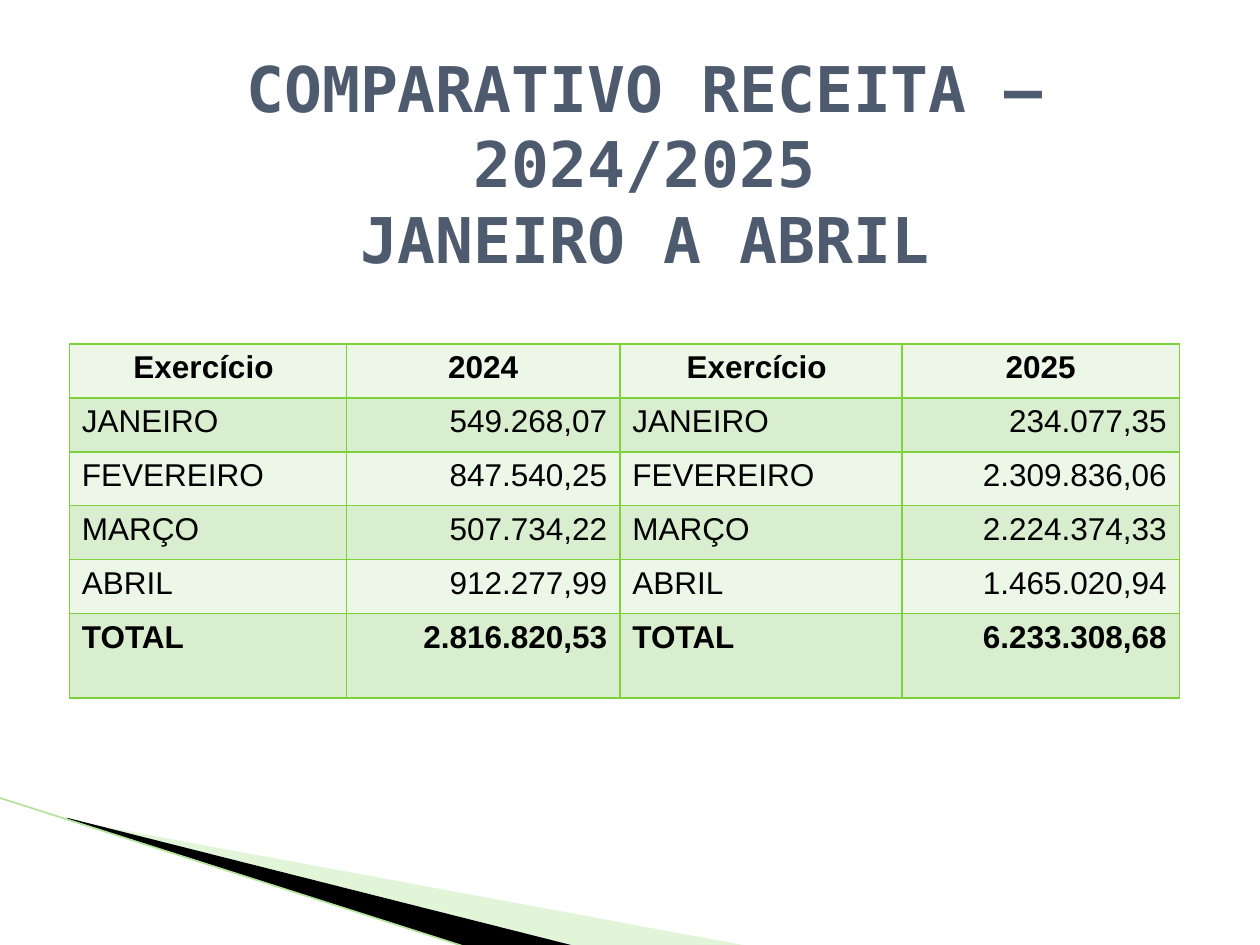
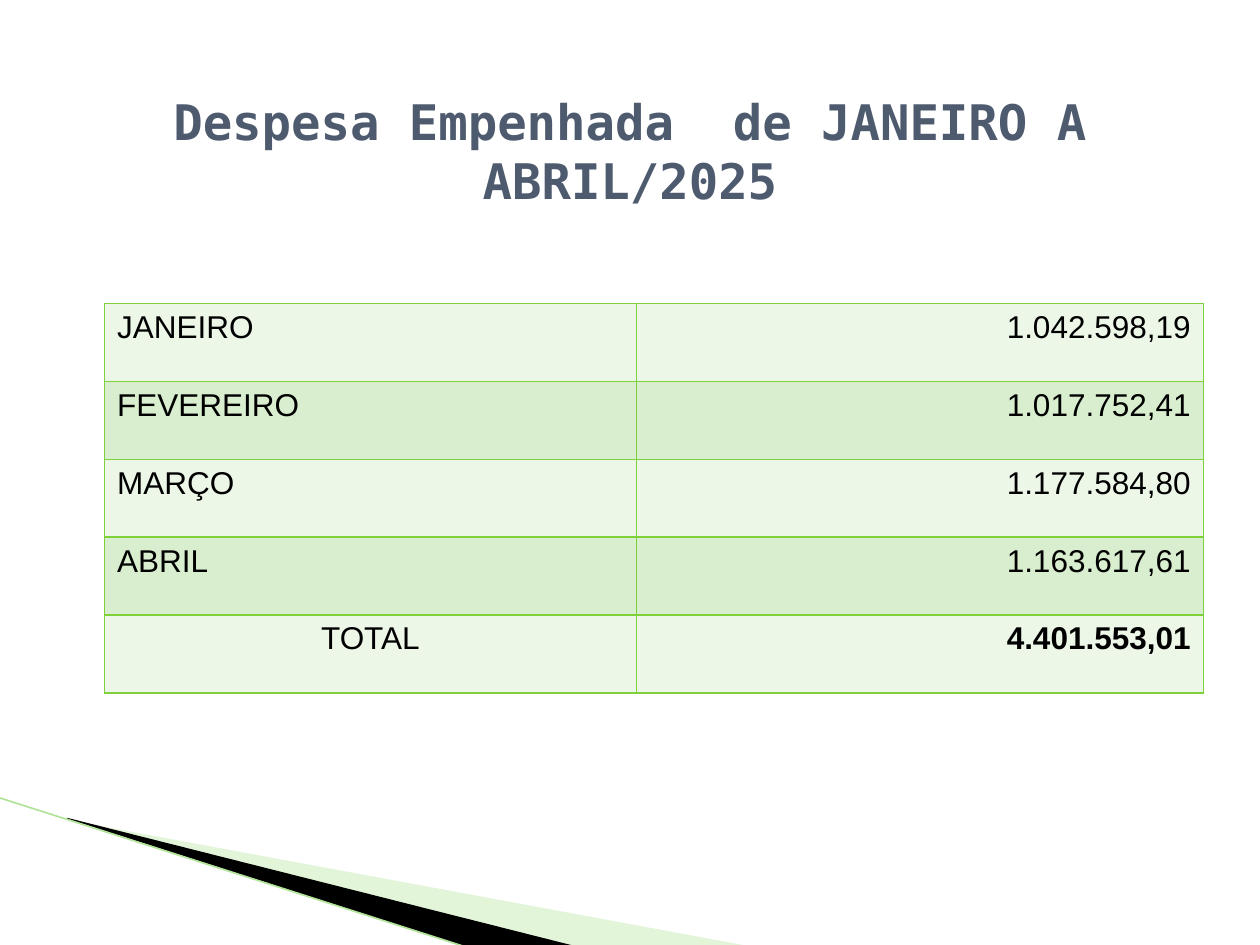
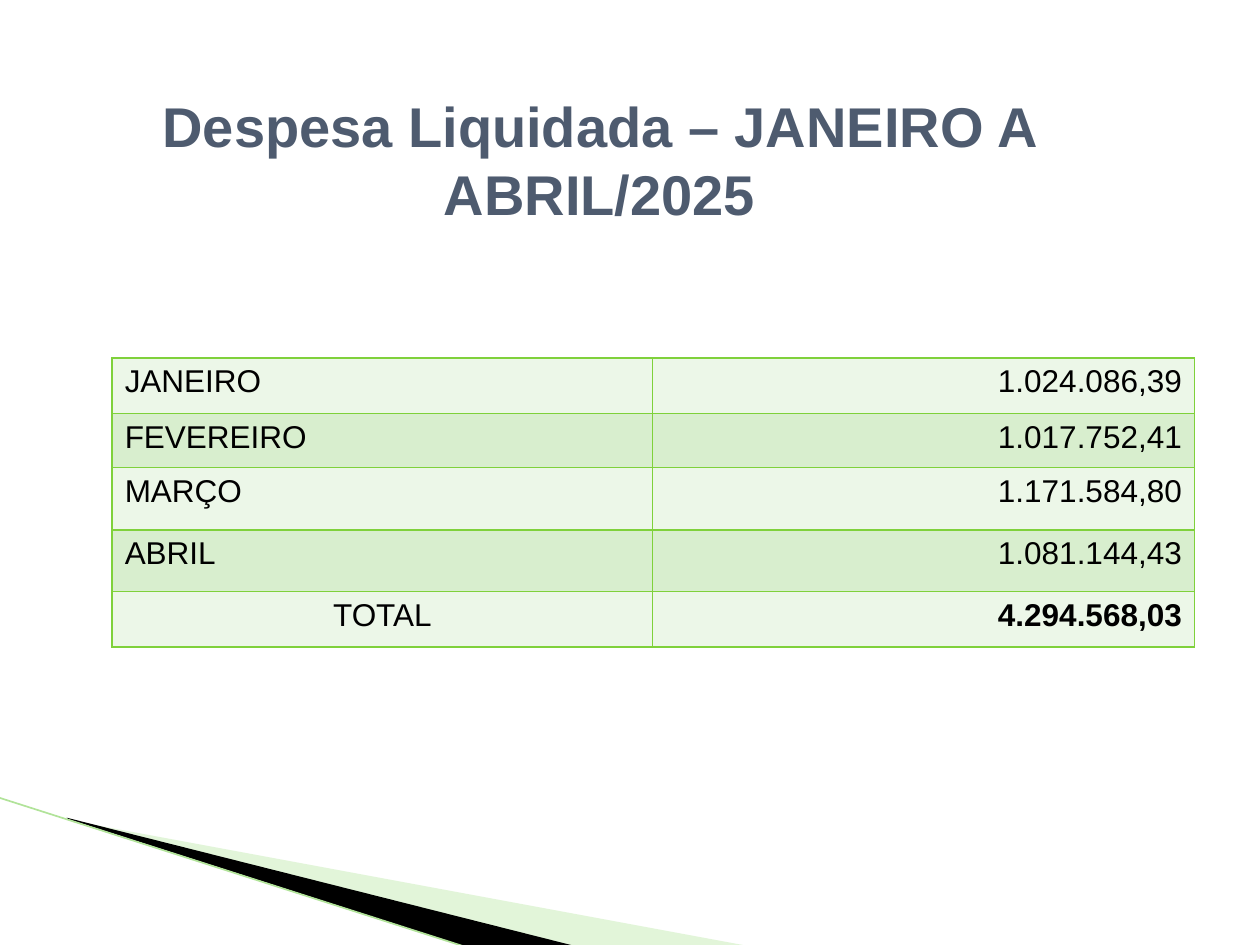
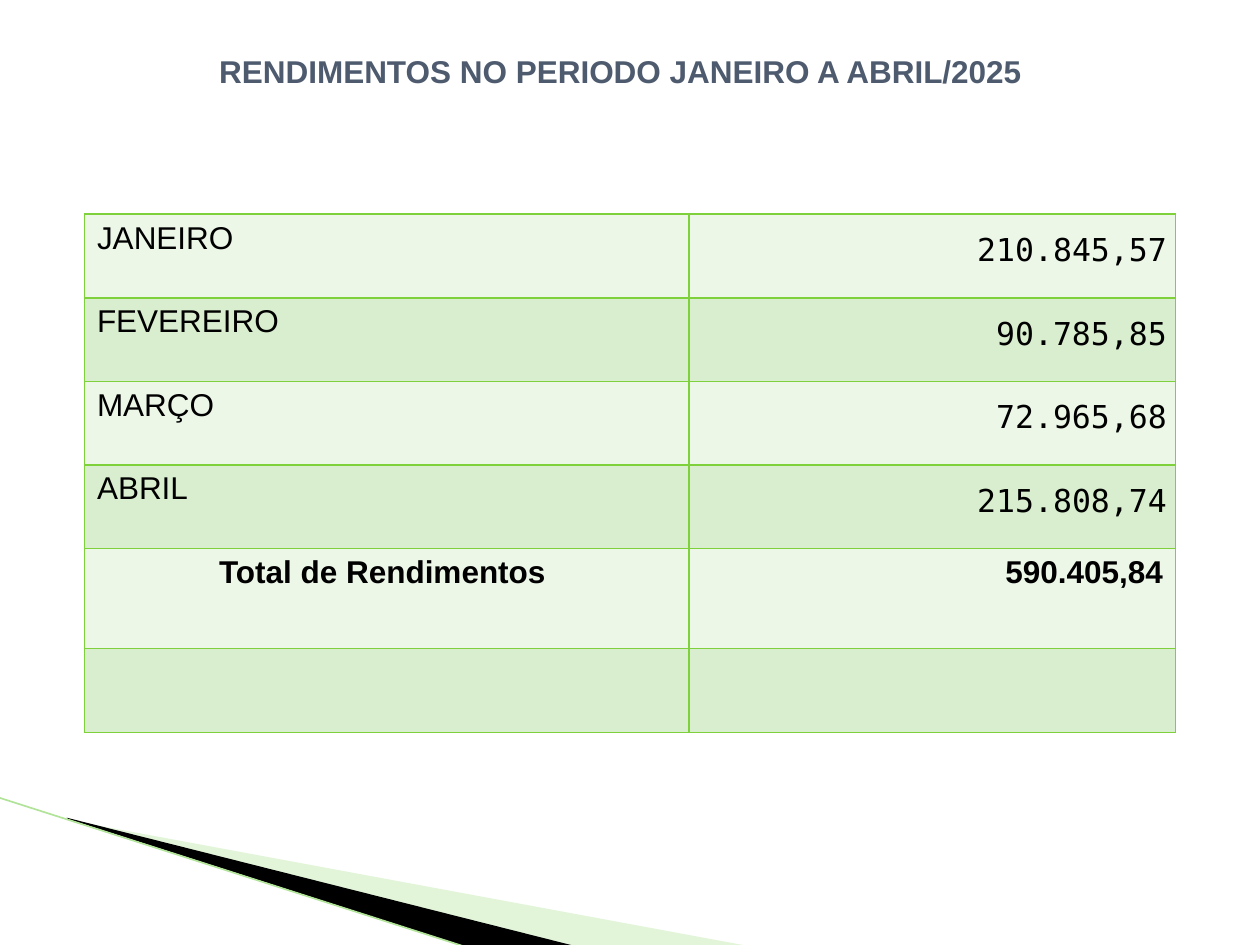
"""Build four slides of monthly revenue and expense tables on a 100 by 75 grid."""
from dataclasses import dataclass
from typing import Any

import lxml.etree
import pptx
import pptx.dml.color
import pptx.enum.shapes
import pptx.enum.text
import pptx.oxml
import pptx.oxml.ns
import pptx.presentation
import pptx.slide
import pptx.table
import pptx.util

ALIGN = pptx.enum.text.PP_ALIGN
ANCHOR = pptx.enum.text.MSO_ANCHOR
LEFT, CENTER, RIGHT = ALIGN.LEFT, ALIGN.CENTER, ALIGN.RIGHT
SANS, MONO = "Arial", "DejaVu Sans Mono"
INK, SLATE, BORDER = "000000", "4E5B6F", "7FD13B"
BANDS = ("ECF7E8", "D8EECE")
MONTHS = ("JANEIRO", "FEVEREIRO", "MARÇO", "ABRIL")
WIDTH, HEIGHT = pptx.util.Inches(10), pptx.util.Inches(7.5)
COLUMNS = 100
BORDER_XML = (
    '<a:{side} {ns} w="12700"><a:solidFill><a:srgbClr val="{color}"/></a:solidFill></a:{side}>'
)


@dataclass(frozen=True)
class Title:
    lines: tuple[str, ...]
    box: tuple[float, float, float, float]
    size: int
    font: str = SANS
    anchor: Any = ANCHOR.TOP


@dataclass(frozen=True)
class Grid:
    left: float
    top: float
    cols: tuple[float, ...]
    heights: tuple[float, ...]
    rows: tuple[tuple[str, ...], ...]
    header: bool = False
    total_row: int = 4
    label_align: Any = CENTER
    label_bold: bool = False
    mono_values: bool = False


@dataclass(frozen=True)
class Wedge:
    points: tuple[tuple[float, float], ...]
    color: str
    opacity: int = 100


WEDGES = (
    Wedge(((5.5, 65.1), (59.5, 75.1), (45.6, 75.1), (5.5, 65)), "B8E7A1", 40),
    Wedge(((5.3, 64.9), (45.7, 75.1), (37.2, 75.2), (5.4, 65)), INK),
)
EDGE = (-0.1, 63.3, 37.1, 75.2)


def monthly(values: tuple[str, ...], total: str, label: str = "TOTAL") -> tuple[tuple[str, ...], ...]:
    """Pair the months and a closing total with their values."""
    return tuple(zip((*MONTHS, label), (*values, total)))


REVENUE_2024 = monthly(("549.268,07", "847.540,25", "507.734,22", "912.277,99"), "2.816.820,53")
REVENUE_2025 = monthly(("234.077,35", "2.309.836,06", "2.224.374,33", "1.465.020,94"), "6.233.308,68")

SLIDES = (
    (
        Title(("COMPARATIVO RECEITA – 2024/2025", "JANEIRO A ABRIL"),
              (11.4, 3.9, 79.5, 18), 36, MONO, ANCHOR.MIDDLE),
        Grid(5.5, 27.3, (22, 21.7, 22.4, 22), (4.28,) * 5 + (6.7,),
             (("Exercício ", "2024", "Exercício ", "2025"),
              *(a + b for a, b in zip(REVENUE_2024, REVENUE_2025))),
             header=True, total_row=5, label_align=LEFT, label_bold=True),
    ),
    (
        Title(("Despesa Empenhada  de JANEIRO A ABRIL/2025",), (7.5, 6.8, 85, 11.8), 28, MONO),
        Grid(8.3, 24.1, (42.2, 45), (6.18,) * 5,
             monthly(("1.042.598,19", "1.017.752,41", "1.177.584,80", "1.163.617,61"), "4.401.553,01")),
    ),
    (
        Title(("Despesa Liquidada – JANEIRO A ABRIL/2025",), (5.1, 6.8, 85, 16.1), 32),
        Grid(8.9, 28.4, (42.9, 43), (4.4, 4.3, 4.95, 4.9, 4.4),
             monthly(("1.024.086,39", "1.017.752,41", "1.171.584,80", "1.081.144,43"), "4.294.568,03")),
    ),
    (
        Title(("RENDIMENTOS NO PERIODO JANEIRO A ABRIL/2025",), (7.5, 3.6, 83.5, 4), 18),
        Grid(6.7, 17, (48, 38.6), (6.64,) * 4 + (7.94, 6.64),
             (*monthly(("210.845,57", "90.785,85", "72.965,68", "215.808,74"), "590.405,84",
                       "Total de Rendimentos "), ("", "")),
             label_bold=True, mono_values=True),
    ),
)


def unit(n: float) -> pptx.util.Emu:
    """Turn grid units into a length."""
    return pptx.util.Emu(round(n * WIDTH / COLUMNS))


def rgb(color: str) -> pptx.dml.color.RGBColor:
    """Turn a hex string into a colour."""
    return pptx.dml.color.RGBColor.from_string(color)


def assign(obj: Any, values: dict[str, Any]) -> None:
    """Set each named attribute of an object."""
    for name, value in values.items():
        setattr(obj, name, value)


def style_runs(p: Any, font: str, size: int, color: str, bold: bool) -> None:
    """Format every run of a paragraph."""
    for r in p.runs:
        assign(r.font, {"name": font, "size": pptx.util.Pt(size), "bold": bold})
        r.font.color.rgb = rgb(color)


def add_title(s: pptx.slide.Slide, title: Title) -> None:
    """Fill and place the title placeholder."""
    sp = s.shapes.title
    assign(sp, dict(zip(("left", "top", "width", "height"), map(unit, title.box))))
    tf = sp.text_frame
    assign(tf, {"word_wrap": True, "vertical_anchor": title.anchor,
                "auto_size": pptx.enum.text.MSO_AUTO_SIZE.NONE})
    p = tf.paragraphs[0]
    for i, line in enumerate(title.lines):
        if i:
            p.add_line_break()
        p.add_run().text = line
    p.alignment = CENTER
    style_runs(p, title.font, title.size, SLATE, True)


def add_borders(cell: Any) -> None:
    """Give a cell a thin line on all four sides."""
    tcPr = cell._tc.get_or_add_tcPr()
    for i, side in enumerate(("lnL", "lnR", "lnT", "lnB")):
        xml = BORDER_XML.format(side=side, color=BORDER, ns=pptx.oxml.ns.nsdecls("a"))
        tcPr.insert(i, pptx.oxml.parse_xml(xml))


def fill_cell(cell: Any, grid: Grid, row: int, col: int) -> None:
    """Write and format one table cell."""
    is_value, is_total = col % 2 == 1, row == grid.total_row
    is_header = grid.header and row == 0
    is_mono = grid.mono_values and is_value and row < grid.total_row
    cell.fill.solid()
    cell.fill.fore_color.rgb = rgb(BANDS[row % 2])
    add_borders(cell)
    p = cell.text_frame.paragraphs[0]
    if grid.rows[row][col]:
        p.add_run().text = grid.rows[row][col]
    if is_header:
        p.alignment = CENTER
    elif is_value:
        p.alignment = RIGHT
    else:
        p.alignment = grid.label_align if is_total else LEFT
    if is_mono:
        p.line_spacing = 1.5
        side = unit(0.7)
        assign(cell, {"margin_left": side, "margin_right": side, "margin_top": 0, "margin_bottom": 0})
    bold = is_header or (is_total and (is_value or grid.label_bold))
    style_runs(p, MONO if is_mono else SANS, 18, INK, bold)


def add_grid(s: pptx.slide.Slide, grid: Grid) -> None:
    """Draw a banded table."""
    frame = s.shapes.add_table(len(grid.rows), len(grid.cols), unit(grid.left), unit(grid.top),
                               unit(sum(grid.cols)), unit(sum(grid.heights)))
    table = frame.table
    assign(table, {"first_row": grid.header, "horz_banding": False})
    for column, width in zip(table.columns, grid.cols):
        column.width = unit(width)
    for i, height in enumerate(grid.heights):
        table.rows[i].height = unit(height)
        for j in range(len(grid.cols)):
            fill_cell(table.cell(i, j), grid, i, j)


def add_wedge(s: pptx.slide.Slide, wedge: Wedge) -> Any:
    """Draw one filled wedge."""
    points = [(unit(x), unit(y)) for x, y in wedge.points]
    builder = s.shapes.build_freeform(*points[0])
    builder.add_line_segments(points[1:], close=True)
    sp = builder.convert_to_shape()
    sp.shadow.inherit = False
    sp.fill.solid()
    sp.fill.fore_color.rgb = rgb(wedge.color)
    sp.line.fill.background()
    if wedge.opacity < 100:
        clr = sp.element.spPr.find(".//" + pptx.oxml.ns.qn("a:srgbClr"))
        alpha = lxml.etree.SubElement(clr, pptx.oxml.ns.qn("a:alpha"))
        alpha.set("val", str(wedge.opacity * 1000))
    return sp


def add_edge(s: pptx.slide.Slide) -> Any:
    """Draw the thin line along the wedges."""
    sp = s.shapes.add_connector(pptx.enum.shapes.MSO_CONNECTOR.STRAIGHT, *map(unit, EDGE))
    sp.line.color.rgb = rgb("B1E399")
    sp.line.width = pptx.util.Pt(0.95)
    lxml.etree.SubElement(sp.element.spPr, pptx.oxml.ns.qn("a:effectLst"))
    return sp


def decorate_master(prs: pptx.presentation.Presentation, s: pptx.slide.Slide) -> None:
    """Draw the corner decoration and move it to the slide master."""
    shapes = [add_wedge(s, wedge) for wedge in WEDGES] + [add_edge(s)]
    for number, sp in enumerate(shapes, 101):
        sp.element.xpath(".//p:cNvPr")[0].set("id", str(number))
        prs.slide_master.shapes.element.append(sp.element)


def main() -> None:
    """Build and save the presentation."""
    prs = pptx.Presentation()
    assign(prs, {"slide_width": WIDTH, "slide_height": HEIGHT})
    for title, grid in SLIDES:
        s = prs.slides.add_slide(prs.slide_layouts[5])
        add_title(s, title)
        add_grid(s, grid)
    decorate_master(prs, prs.slides[0])
    prs.save("out.pptx")


if __name__ == "__main__":
    main()
